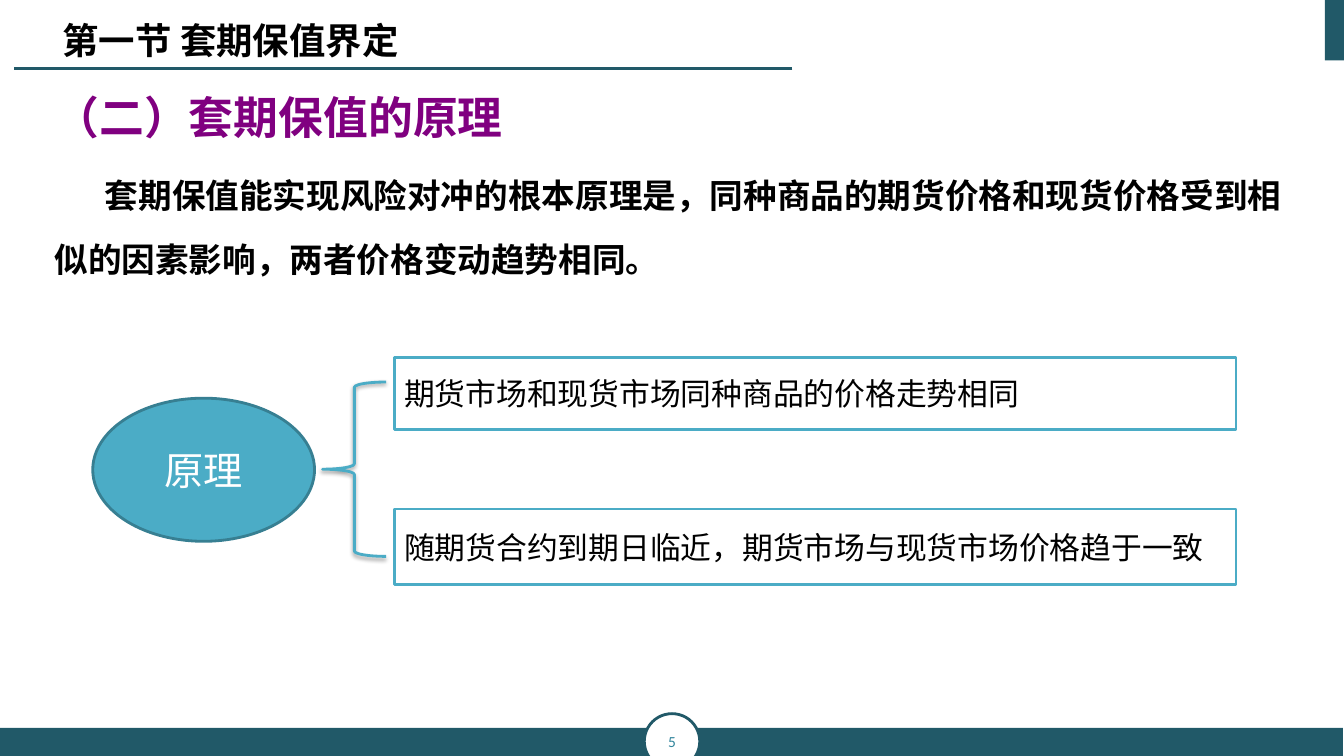
from lxml import etree
from pptx import Presentation
from pptx.dml.color import RGBColor
from pptx.enum.shapes import MSO_CONNECTOR, MSO_SHAPE
from pptx.enum.text import MSO_ANCHOR, MSO_AUTO_SIZE, PP_ALIGN
from pptx.oxml import parse_xml
from pptx.oxml.ns import nsdecls, qn
from pptx.util import Inches, Pt

RECT, OVAL, BRACE = MSO_SHAPE.RECTANGLE, MSO_SHAPE.OVAL, MSO_SHAPE.LEFT_BRACE
LEFT, CENTER = PP_ALIGN.LEFT, PP_ALIGN.CENTER
TOP, MIDDLE = MSO_ANCHOR.TOP, MSO_ANCHOR.MIDDLE

BLACK = RGBColor(0x00, 0x00, 0x00)
WHITE = RGBColor(0xFF, 0xFF, 0xFF)
DARK_TEAL = RGBColor(0x21, 0x59, 0x68)
NUMBER_TEAL = RGBColor(0x31, 0x85, 0x9C)
AQUA = RGBColor(0x4B, 0xAC, 0xC6)
AQUA_EDGE = RGBColor(0x37, 0x7F, 0x92)
PURPLE = RGBColor(0x80, 0x00, 0x80)

HAN, SANS, SERIF = "Noto Sans CJK SC", "Calibri", "Times New Roman"

SECTION = "第一节 套期保值界定"
HEADING = "（二）套期保值的原理"
EXPLANATION = ("套期保值能实现风险对冲的根本原理是，同种商品的期货价格和现货价格"
               "受到相似的因素影响，两者价格变动趋势相同。")
HUB = "原理"
PAGE_NUMBER = "5"
# (top, height, runs)
PRINCIPLES = [
    (3.55, 0.71, [("期货", SANS), ("市场和现货市场同种商品的价格走势相同", SERIF)]),
    (5.05, 0.75, [("随期货合约到期日临近，期货市场与现货市场价格趋于一致", SANS)]),
]
PRINCIPLE_LEFT, PRINCIPLE_WIDTH = 3.91, 8.35


def add_run(paragraph, text, size, font, color, bold=False):
    run = paragraph.add_run()
    run.text = text
    run.font.size = Pt(size)
    run.font.name = font
    run.font.bold = bold
    run.font.color.rgb = color
    east_asian = etree.SubElement(run._r.get_or_add_rPr(), qn("a:ea"))
    east_asian.set("typeface", HAN)


def add_block(slide, kind, box, fill=None, edge=None):
    block = slide.shapes.add_shape(kind, *map(Inches, box))
    block.shadow.inherit = False
    if fill is None:
        block.fill.background()
    else:
        block.fill.solid()
        block.fill.fore_color.rgb = fill
    if edge is None:
        block.line.fill.background()
    else:
        block.line.color.rgb = edge
        block.line.width = Pt(2)
    return block


def label(block, runs, size, color, align):
    frame = block.text_frame
    frame.word_wrap = True
    frame.vertical_anchor = MIDDLE
    paragraph = frame.paragraphs[0]
    paragraph.alignment = align
    for text, font in runs:
        add_run(paragraph, text, size, font, color)


def place(placeholder, box, anchor):
    placeholder.left, placeholder.top, placeholder.width, placeholder.height = map(Inches, box)
    frame = placeholder.text_frame
    frame.word_wrap = True
    frame.auto_size = MSO_AUTO_SIZE.NONE
    frame.vertical_anchor = anchor
    return frame


def format_body(paragraph, indent, space_before, line_spacing):
    """Drop the bullet and set the first-line indent and spacing."""
    properties = paragraph._p.get_or_add_pPr()
    properties.set("marL", "0")
    properties.set("indent", str(Inches(indent)))
    etree.SubElement(properties, qn("a:buNone"))
    paragraph.alignment = LEFT
    paragraph.space_before = Pt(space_before)
    paragraph.line_spacing = line_spacing


def draw_frame(slide):
    add_block(slide, RECT, (13.14, 0, 0.2, 0.6), DARK_TEAL)
    add_block(slide, RECT, (0, 7.22, 13.32, 0.28), DARK_TEAL)
    badge = add_block(slide, OVAL, (6.39, 7.08, 0.55, 0.55), WHITE, DARK_TEAL)
    label(badge, [(PAGE_NUMBER, SANS)], 11, NUMBER_TEAL, CENTER)
    rule = slide.shapes.add_connector(MSO_CONNECTOR.STRAIGHT, Inches(7.86), Inches(0.68),
                                      Inches(0.14), Inches(0.68))
    rule.line.color.rgb = DARK_TEAL
    rule.line.width = Pt(1.5)
    etree.SubElement(rule._element.spPr, qn("a:effectLst"))


def write_text(slide):
    title = place(slide.shapes.title, (0.52, 0.13, 4.41, 0.54), MIDDLE).paragraphs[0]
    title.alignment = LEFT
    add_run(title, SECTION, 26, HAN, BLACK, bold=True)

    body = place(slide.placeholders[1], (0.44, 0.84, 12.52, 5.77), TOP)
    heading = body.paragraphs[0]
    format_body(heading, 0, 0, 1.0)
    add_run(heading, HEADING, 32, HAN, PURPLE, bold=True)
    explanation = body.add_paragraph()
    format_body(explanation, 0.5, 5, 1.6)
    add_run(explanation, EXPLANATION, 24, SERIF, BLACK, bold=True)


def draw_principles(slide):
    hub = add_block(slide, OVAL, (0.92, 3.95, 2.2, 1.42), AQUA, AQUA_EDGE)
    label(hub, [(HUB, SANS)], 28, WHITE, CENTER)

    brace = add_block(slide, BRACE, (3.2, 3.79, 0.63, 1.73), edge=AQUA)
    effects = brace._element.spPr.find(qn("a:effectLst"))
    effects.append(parse_xml(
        f'<a:outerShdw {nsdecls("a")} blurRad="{Pt(3.1)}" dist="{Pt(1.6)}" dir="5400000" '
        'rotWithShape="0"><a:srgbClr val="000000"><a:alpha val="38000"/></a:srgbClr>'
        '</a:outerShdw>'))

    for top, height, runs in PRINCIPLES:
        box = add_block(slide, RECT, (PRINCIPLE_LEFT, top, PRINCIPLE_WIDTH, height), WHITE, AQUA)
        label(box, runs, 22, BLACK, LEFT)


def main():
    deck = Presentation()
    deck.slide_width, deck.slide_height = Inches(13.33), Inches(7.5)
    slide = deck.slides.add_slide(deck.slide_layouts[1])
    draw_frame(slide)
    write_text(slide)
    draw_principles(slide)
    deck.save("out.pptx")


if __name__ == "__main__":
    main()
